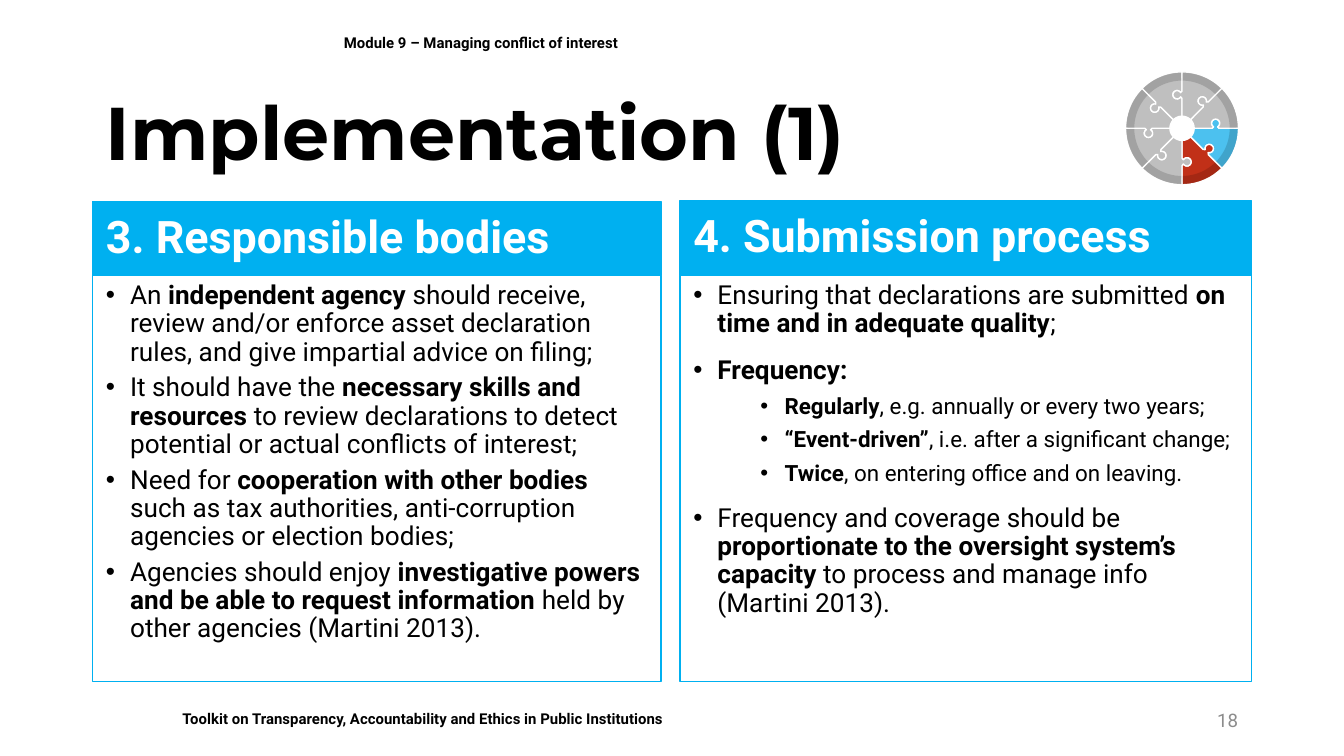
from math import cos, radians, sin

from lxml import etree
from pptx import Presentation
from pptx.dml.color import RGBColor
from pptx.enum.shapes import MSO_SHAPE as Shape
from pptx.enum.text import MSO_ANCHOR as Anchor, PP_ALIGN as Align
from pptx.oxml.ns import qn
from pptx.util import Inches, Pt

CELL = 0.1  # inches per grid column and row
COLS, ROWS = 100, 56.25
LEFT, RIGHT = 6.9, 93.1
BLACK, WHITE, ACCENT, GREY, MUTED = "000000", "FFFFFF", "00B0F0", "BFBFBF", "8C8C8C"
BLUE, RED = "4CC1EF", "C13018"
SIZES = (14, 12)  # text size by bullet level
INDENTS = (1.8, 6.8)

# Bold wording stands between asterisks; each bullet is (level, space before, text).
BODIES = [
    (0, 4, "An *independent agency *should receive, review and/or enforce asset "
           "declaration rules, and give impartial advice on filing;"),
    (0, 4, "It should have the *necessary skills and resources *to review "
           "declarations to detect potential or actual conflicts of interest;"),
    (0, 4, "Need for *cooperation with other bodies *such as tax authorities, "
           "anti-corruption agencies or election bodies;"),
    (0, 4, "Agencies should enjoy *investigative powers and be able to request "
           "information* held by other agencies (Martini 2013)."),
]
PROCESS = [
    (0, 10, "Ensuring that declarations are submitted *on time and in adequate quality*;"),
    (0, 10, "*Frequency:*"),
    (1, 5, "*Regularly*, e.g. annually or every two years;"),
    (1, 5, "*“Event-driven”*, i.e. after a significant change;"),
    (1, 5, "*Twice*, on entering office and on leaving."),
    (0, 10, "Frequency and coverage should be *proportionate to the oversight "
            "system’s capacity *to process and manage info (Martini 2013)."),
]


def grid(n):
    return Inches(n * CELL)


def rgb(code):
    return RGBColor.from_string(code)


def arc(radius, start, end, steps=12):
    """Points on a circle round the origin, angles in degrees, clockwise on screen."""
    angles = [radians(start + (end - start) * i / steps) for i in range(steps + 1)]
    return [(radius * cos(a), radius * sin(a)) for a in angles]


def seam(angle, inner, outer):
    """Radial cut between two puzzle pieces, with a round knob half way."""
    knob = [(2.5 + x, 0.37 - y) for x, y in arc(0.31, 120, 420)]
    line = [(inner, 0), (2.23, 0), *knob, (2.77, 0), (outer, 0)]
    c, s = cos(radians(angle)), sin(radians(angle))
    return [(r * c + off * s, r * s - off * c) for r, off in line]


class Deck:
    font = "Roboto"

    def __init__(self):
        self.prs = Presentation()
        self.prs.slide_width, self.prs.slide_height = grid(COLS), grid(ROWS)
        self.s = self.prs.slides.add_slide(self.prs.slide_layouts[6])

    def paint(self, sp, fill=None, line=None, alpha=None):
        sp.shadow.inherit = False
        if fill:
            sp.fill.solid()
            sp.fill.fore_color.rgb = rgb(fill)
        else:
            sp.fill.background()
        if line:
            sp.line.color.rgb = rgb(line)
            sp.line.width = Pt(0.75)
        else:
            sp.line.fill.background()
        if alpha:
            color = sp.element.spPr.find(qn("a:solidFill")).find(qn("a:srgbClr"))
            etree.SubElement(color, qn("a:alpha"), val=str(alpha * 1000))

    def rect(self, box, fill=None, line=None):
        sp = self.s.shapes.add_shape(Shape.RECTANGLE, *map(grid, box))
        self.paint(sp, fill, line)
        return sp

    def add_runs(self, p, text, size, color=BLACK, bold=False, font=None, align=Align.LEFT):
        """Add runs to a paragraph; bold switches at each asterisk."""
        p.alignment = align
        for i, part in enumerate(text.split("*")):
            if part:
                r = p.add_run()
                r.text = part
                r.font.name, r.font.size = font or self.font, Pt(size)
                r.font.bold = bold or i % 2 == 1
                r.font.color.rgb = rgb(color)

    def label(self, box, text, size, anchor=Anchor.MIDDLE, fill=None, line=None, **style):
        if fill:
            sp = self.rect(box, fill, line)
        else:
            sp = self.s.shapes.add_textbox(*map(grid, box))
        tf = sp.text_frame
        tf.word_wrap, tf.vertical_anchor = True, anchor
        p = tf.paragraphs[0]
        p.line_spacing = 0.9 if size > 20 else 1.0
        self.add_runs(p, text, size, **style)

    def bullets(self, box, items):
        tf = self.rect(box, line=ACCENT).text_frame
        tf.word_wrap, tf.vertical_anchor = True, Anchor.TOP
        for i, (level, before, text) in enumerate(items):
            p = tf.add_paragraph() if i else tf.paragraphs[0]
            p.level, p.line_spacing = level, 0.9
            p.space_before = Pt(before if i else 0)
            pPr = p._p.get_or_add_pPr()
            pPr.set("marL", str(grid(INDENTS[level])))
            pPr.set("indent", str(-grid(INDENTS[0])))
            etree.SubElement(pPr, qn("a:buFont"), typeface="Arial")
            etree.SubElement(pPr, qn("a:buChar"), char="•")
            self.add_runs(p, text, SIZES[level])

    def column(self, left, top, width, heading, items):
        split, bottom = 20.5, 50.7
        self.label((left, top, width, split - top), heading, 24,
                   fill=ACCENT, line=ACCENT, color=WHITE, bold=True)
        self.bullets((left, split, width, bottom - split), items)

    def outline(self, shapes, cx, cy, points, **look):
        pts = [(grid(cx + x), grid(cy + y)) for x, y in points]
        fb = shapes.build_freeform(*pts[0], scale=1.0)
        fb.add_line_segments(pts[1:], close=True)
        self.paint(fb.convert_to_shape(), **look)

    def puzzle_wheel(self, cx, cy, colors):
        """Ring of equal puzzle pieces, with a darker band along the rim."""
        shapes = self.s.shapes.add_group_shape().shapes
        hub, band, rim = 0.9, 3.55, 4.15
        step, gap = 360 / len(colors), 0.8
        for i, color in enumerate(colors):
            a, b = i * step, (i + 1) * step
            piece = (seam(a, hub, rim) + arc(rim + 0.05, a, b)
                     + seam(b, hub, rim)[::-1] + arc(hub, b, a))
            self.outline(shapes, cx, cy, piece, fill=color, line=WHITE)
        for i in range(len(colors)):
            a, b = i * step + gap, (i + 1) * step - gap
            self.outline(shapes, cx, cy, arc(rim, a, b) + arc(band, b, a),
                         fill=BLACK, alpha=15)


def main():
    deck = Deck()
    deck.label((12.6, 52.3, 71.7, 2.4),
               "Toolkit on Transparency, Accountability and Ethics in Public Institutions",
               8, anchor=Anchor.TOP, fill=WHITE, bold=True)
    deck.column(LEFT, 15, 42.3, "3. Responsible bodies", BODIES)
    deck.column(50.6, 14.9, 42.5, "4. Submission process", PROCESS)
    deck.label((70.6, 52.1, RIGHT - 70.6, 3), "18", 10, color=MUTED, align=Align.RIGHT)
    deck.label((24.6, 1, RIGHT - 24.6, 4.4), "Module 9 – Managing conflict of interest",
               8, bold=True)
    deck.label((LEFT, 6.4, RIGHT - LEFT, 7.5), "Implementation (1)", 40,
               bold=True, font="Montserrat")
    deck.puzzle_wheel(87.95, 9.55, [BLUE, RED] + [GREY] * 6)
    deck.prs.save("out.pptx")


if __name__ == "__main__":
    main()
